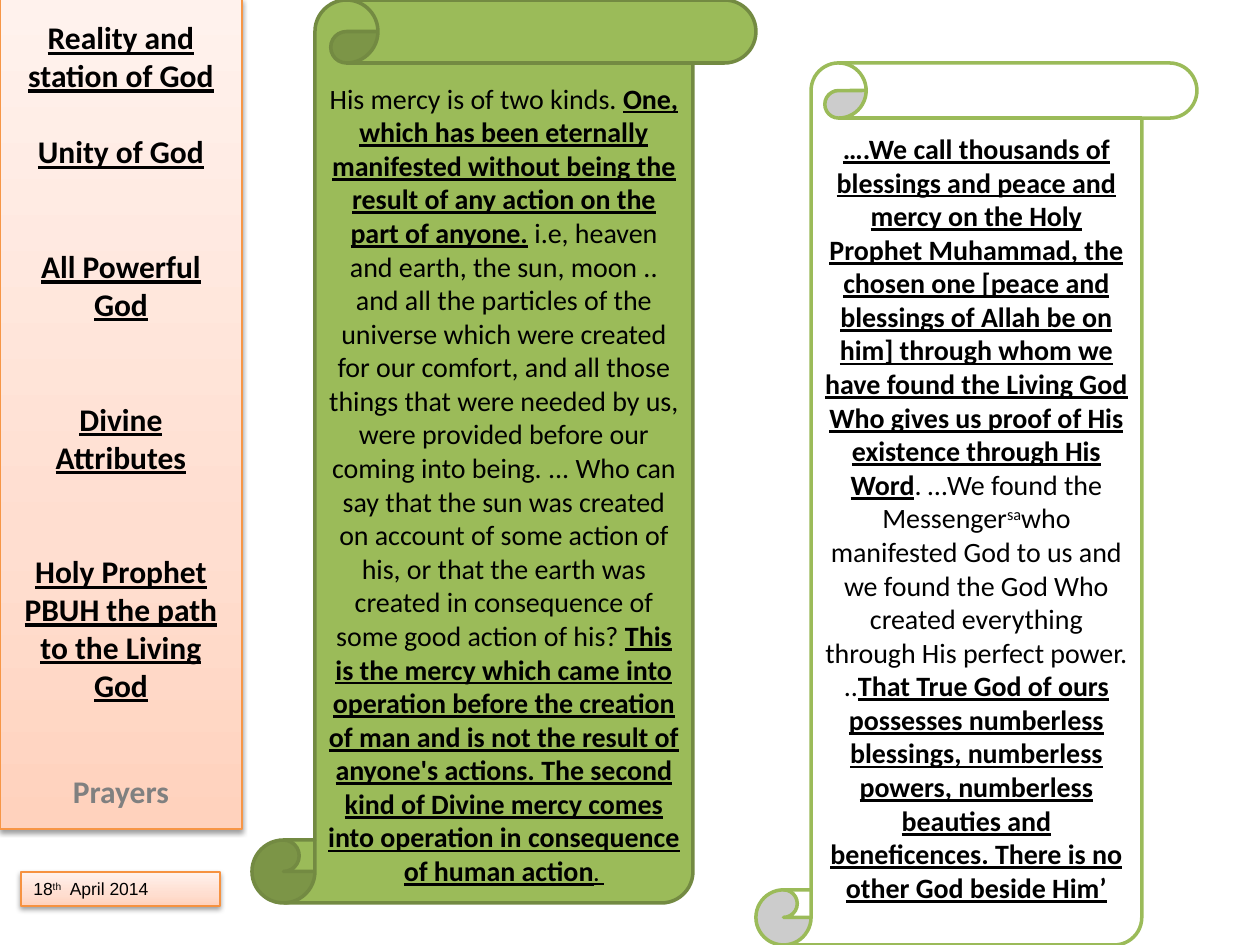
from lxml import etree
from pptx import Presentation
from pptx.dml.color import RGBColor
from pptx.enum.shapes import MSO_SHAPE
from pptx.enum.text import MSO_ANCHOR, MSO_AUTO_SIZE, PP_ALIGN
from pptx.oxml.ns import qn
from pptx.util import Pt

SCROLL = MSO_SHAPE.VERTICAL_SCROLL
RECTANGLE = MSO_SHAPE.RECTANGLE
MIDDLE = MSO_ANCHOR.MIDDLE
TOP = MSO_ANCHOR.TOP
CENTER = PP_ALIGN.CENTER
LEFT = PP_ALIGN.LEFT
GROW = MSO_AUTO_SIZE.SHAPE_TO_FIT_TEXT

EMU_PER_PX = 914400 / 126
COLORS = {
    "green": "9BBB59",
    "dark_green": "738A42",
    "white": "FFFFFF",
    "black": "000000",
    "gray": "808080",
    "orange": "F79646",
    "date_orange": "F69240",
}
PEACH_STOPS = [(0, "FFD2BD"), (35, "FFDED0"), (100, "FFF2ED")]
STRONG = {"bold": True, "underline": True}
PLAIN = {"bold": False, "underline": False}

MERCY = [
    ("His mercy is of two kinds. ", PLAIN),
    ("One, which has been eternally manifested without being the result of any "
     "action on the part of anyone.", STRONG),
    (" i.e, heaven and earth, the sun, moon .. and all the particles of the universe "
     "which were created for our comfort, and all those things that were needed by us, "
     "were provided before our coming into being. ... Who can say that the sun was "
     "created on account of some action of his, or that the earth was created in "
     "consequence of some good action of his? ", PLAIN),
    ("This is the mercy which came into operation before the creation of man and is not "
     "the result of anyone's actions. The second kind of Divine mercy comes into "
     "operation in consequence of human action", STRONG),
    (". ", {**STRONG, "size": Pt(12)}),
]
PROPHET = [
    ("….We call thousands of blessings and peace and mercy on the Holy Prophet Muhammad, "
     "the chosen one [peace and blessings of Allah be on him] through whom we have found "
     "the Living God Who gives us proof of His existence through His Word", STRONG),
    (". …We found the Messenger", PLAIN),
    ("sa", {**PLAIN, "raised": True}),
    ("who manifested God to us and we found the God Who created everything through His "
     "perfect power. ..", PLAIN),
    ("That True God of ours possesses numberless blessings, numberless powers, numberless "
     "beauties and beneficences. There is no other God beside Him’", STRONG),
]
TOPICS = [
    ("Reality and station of God", 0, STRONG),
    ("Unity of God", 22, STRONG),
    ("All Powerful God", 44, STRONG),
    ("Divine Attributes", 44, STRONG),
    ("Holy Prophet PBUH the path to the Living God", 44, STRONG),
    ("Prayers", 39, {"bold": True, "color": "gray"}),
]
DATE = [("18", {}), ("th", {"raised": True}), ("  April 2014", {})]


class SlideBuilder:
    """Draws scrolls, panels and text on the current slide."""

    def __init__(self, slide):
        self.slide = slide

    def px(self, value):
        return round(value * EMU_PER_PX)

    def shape(self, kind, box, line, line_width):
        shape = self.slide.shapes.add_shape(kind, *map(self.px, box))
        shape.shadow.inherit = False
        shape.line.color.rgb = RGBColor.from_string(COLORS[line])
        shape.line.width = Pt(line_width)
        return shape

    def scroll(self, box, fill, line):
        shape = self.shape(SCROLL, box, line, 2)
        shape.fill.solid()
        shape.fill.fore_color.rgb = RGBColor.from_string(COLORS[fill])
        return shape

    def panel(self, box, line):
        shape = self.shape(RECTANGLE, box, line, 0.75)
        properties = shape.element.spPr
        gradient = etree.Element(qn("a:gradFill"), rotWithShape="1")
        stops = etree.SubElement(gradient, qn("a:gsLst"))
        for position, color in PEACH_STOPS:
            stop = etree.SubElement(stops, qn("a:gs"), pos=str(position * 1000))
            etree.SubElement(stop, qn("a:srgbClr"), val=color)
        etree.SubElement(gradient, qn("a:lin"), ang="16200000", scaled="0")
        properties.find(qn("a:prstGeom")).addnext(gradient)
        shadow = etree.SubElement(
            properties.find(qn("a:effectLst")), qn("a:outerShdw"),
            blurRad=str(Pt(3.1)), dist=str(Pt(1.6)), dir="5400000", rotWithShape="0")
        color = etree.SubElement(shadow, qn("a:srgbClr"), val=COLORS["black"])
        etree.SubElement(color, qn("a:alpha"), val="38000")
        return shape

    def text(self, shape, paragraphs, size, font="Calibri", align=CENTER, **frame_format):
        frame = shape.text_frame
        for name, value in {"word_wrap": True, "vertical_anchor": MIDDLE,
                            **frame_format}.items():
            setattr(frame, name, value)
        for index, (runs, space) in enumerate(paragraphs):
            paragraph = frame.add_paragraph() if index else frame.paragraphs[0]
            paragraph.alignment = align
            paragraph.space_before = Pt(space)
            for words, style in runs:
                self.run(paragraph, words, {"name": font, "size": Pt(size), **style})

    def run(self, paragraph, words, style):
        run = paragraph.add_run()
        run.text = words
        values = dict(style)
        color = values.pop("color", "black")
        if values.pop("raised", False):
            run.font._element.set("baseline", "30000")
        for name, value in values.items():
            setattr(run.font, name, value)
        run.font.color.rgb = RGBColor.from_string(COLORS[color])


def main():
    presentation = Presentation()
    slide = presentation.slides.add_slide(presentation.slide_layouts[6])
    builder = SlideBuilder(slide)
    presentation.slide_width = builder.px(1260)
    presentation.slide_height = builder.px(945)

    mercy = builder.scroll((252, 0, 504, 903), "green", "dark_green")
    builder.text(mercy, [(MERCY, 0)], 16, margin_top=builder.px(40))

    topics = builder.panel((0, -1, 242, 830), "orange")
    builder.text(topics, [([(words, style)], space) for words, space, style in TOPICS], 18)

    prophet = builder.scroll((756, 63, 441, 882), "white", "green")
    builder.text(prophet, [(PROPHET, 0)], 16)

    date = builder.panel((21, 872, 199, 34), "date_orange")
    builder.text(date, [(DATE, 0)], 10, "Arial", LEFT,
                 word_wrap=False, vertical_anchor=TOP, auto_size=GROW)

    presentation.save("out.pptx")


if __name__ == "__main__":
    main()
